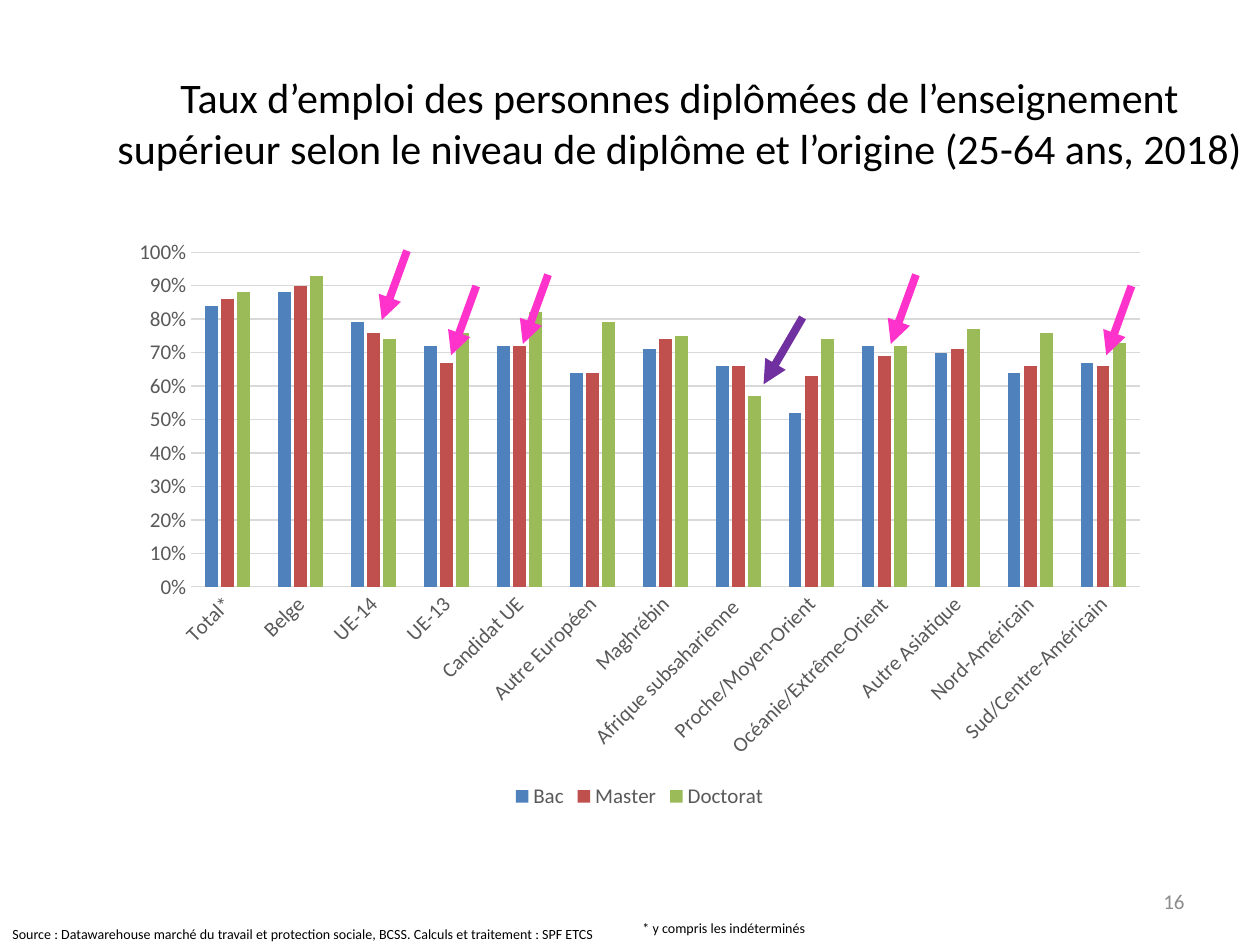
from lxml import etree
from pptx import Presentation
from pptx import util as u
from pptx.chart.data import CategoryChartData
from pptx.dml.color import RGBColor
from pptx.enum import chart as ch, shapes, text
from pptx.oxml.ns import qn

HUES = {
    "ink": "000000", "gray": "595959", "pale": "8C8C8C", "grid": "D9D9D9",
    "blue": "4F81BD", "red": "C0504D", "green": "9BBB59",
    "pink": "FF33CC", "plum": "7030A0",
}

CATS = ["Total*", "Belge", "UE-14", "UE-13", "Candidat UE", "Autre Européen",
        "Maghrébin", "Afrique subsaharienne\u00a0", "Proche/Moyen-Orient",
        "Océanie/Extrême-Orient", "Autre Asiatique", "Nord-Américain",
        "Sud/Centre-Américain"]

RATES = {
    "Bac": ("blue", [0.84, 0.88, 0.79, 0.72, 0.72, 0.64, 0.71, 0.66, 0.52,
                     0.72, 0.7, 0.64, 0.67]),
    "Master": ("red", [0.86, 0.9, 0.76, 0.67, 0.72, 0.64, 0.74, 0.66, 0.63,
                       0.69, 0.71, 0.66, 0.66]),
    "Doctorat": ("green", [0.88, 0.93, 0.74, 0.76, 0.82, 0.79, 0.75, 0.57,
                           0.74, 0.72, 0.77, 0.76, 0.73]),
}

PINKS = [(3.23, 1.99), (3.78, 2.27), (4.35, 2.18), (7.27, 2.18), (8.98, 2.27)]


class Deck:
    face = "Calibri"

    def __init__(self):
        self.prs = Presentation()
        self.prs.slide_width = u.Inches(10)
        self.prs.slide_height = u.Inches(7.5)
        self.slide = self.prs.slides.add_slide(self.prs.slide_layouts[5])

    def hue(self, name):
        return RGBColor.from_string(HUES[name])

    def font(self, font, size, hue):
        for key, val in {"name": self.face, "size": u.Pt(size)}.items():
            setattr(font, key, val)
        font.color.rgb = self.hue(hue)

    def stroke(self, line, hue, width):
        line.color.rgb = self.hue(hue)
        line.width = u.Pt(width)

    def fill(self, shape, words, size, hue="ink", align=text.PP_ALIGN.LEFT,
             anchor=text.MSO_ANCHOR.TOP, wrap=True):
        frame = shape.text_frame
        form = {"text": words, "word_wrap": wrap, "vertical_anchor": anchor,
                "auto_size": text.MSO_AUTO_SIZE.NONE}
        for key, val in form.items():
            setattr(frame, key, val)
        para = frame.paragraphs[0]
        para.alignment = align
        self.font(para.runs[0].font, size, hue)

    def title(self, words, box, size):
        shape = self.slide.shapes.title
        for key, val in zip(("left", "top", "width", "height"), box):
            setattr(shape, key, u.Inches(val))
        self.fill(shape, words, size, align=text.PP_ALIGN.CENTER)

    def note(self, words, box, size, **form):
        shape = self.slide.shapes.add_textbox(*map(u.Inches, box))
        self.fill(shape, words, size, **form)

    def chart(self, box):
        data = CategoryChartData(number_format="0%")
        data.categories = CATS
        for name, (_, vals) in RATES.items():
            data.add_series(name, vals)
        chart = self.slide.shapes.add_chart(
            ch.XL_CHART_TYPE.COLUMN_CLUSTERED, *map(u.Inches, box), data).chart
        self.font(chart.font, 12, "ink")
        chart.has_title = False
        chart.has_legend = True
        legend = chart.legend
        legend.position = ch.XL_LEGEND_POSITION.BOTTOM
        legend.include_in_layout = False
        self.font(legend.font, 12, "gray")
        plot = chart.plots[0]
        for key, val in {"gap_width": 219, "overlap": -27,
                         "vary_by_categories": False}.items():
            setattr(plot, key, val)
        for bars, (hue, _) in zip(plot.series, RATES.values()):
            bars.format.fill.solid()
            bars.format.fill.fore_color.rgb = self.hue(hue)
            bars.invert_if_negative = False
        cat, val = chart.category_axis, chart.value_axis
        for axis in (cat, val):
            axis.major_tick_mark = axis.minor_tick_mark = ch.XL_TICK_MARK.NONE
            self.font(axis.tick_labels.font, 12, "gray")
        self.stroke(cat.format.line, "grid", 0.75)
        turn = cat._element.find(qn("c:txPr")).find(qn("a:bodyPr"))
        turn.set("rot", "-2700000")
        for key, num in {"minimum_scale": 0, "maximum_scale": 1,
                         "major_unit": 0.1}.items():
            setattr(val, key, num)
        val.tick_labels.number_format = "0%"
        val.tick_labels.number_format_is_linked = False
        val.format.line.fill.background()
        self.stroke(val.major_gridlines.format.line, "grid", 0.75)

    def arrow(self, x, y, dx, dy, hue):
        ends = map(u.Inches, (x, y, x + dx, y + dy))
        line = self.slide.shapes.add_connector(
            shapes.MSO_CONNECTOR.STRAIGHT, *ends)
        self.stroke(line.line, hue, 4.5)
        props = line._element.spPr
        tip = etree.SubElement(props.find(qn("a:ln")), qn("a:tailEnd"))
        tip.set("type", "triangle")
        etree.SubElement(props, qn("a:effectLst"))


def main():
    deck = Deck()
    deck.note("16", (7.17, 6.95, 2.33, 0.4), 12, hue="pale",
              align=text.PP_ALIGN.RIGHT, anchor=text.MSO_ANCHOR.MIDDLE)
    deck.note("Source : Datawarehouse marché du travail et protection sociale, "
              "BCSS. Calculs et traitement : SPF ETCS",
              (0, 7.3, 5.07, 0.24), 8)
    deck.title("Taux d’emploi des personnes diplômées de l’enseignement "
               "supérieur selon le niveau de diplôme et l’origine "
               "(25-64 ans, 2018)", (0.83, 0.52, 9.13, 0.91), 24)
    deck.chart((0.94, 1.81, 8.27, 4.65))
    for x, y in PINKS:
        deck.arrow(x, y, -0.2, 0.55, "pink")
    deck.arrow(6.37, 2.52, -0.31, 0.53, "plum")
    deck.note("* y compris les indéterminés", (5, 7.25, 1.51, 0.24), 8,
              wrap=False)
    deck.prs.save("out.pptx")


if __name__ == "__main__":
    main()
